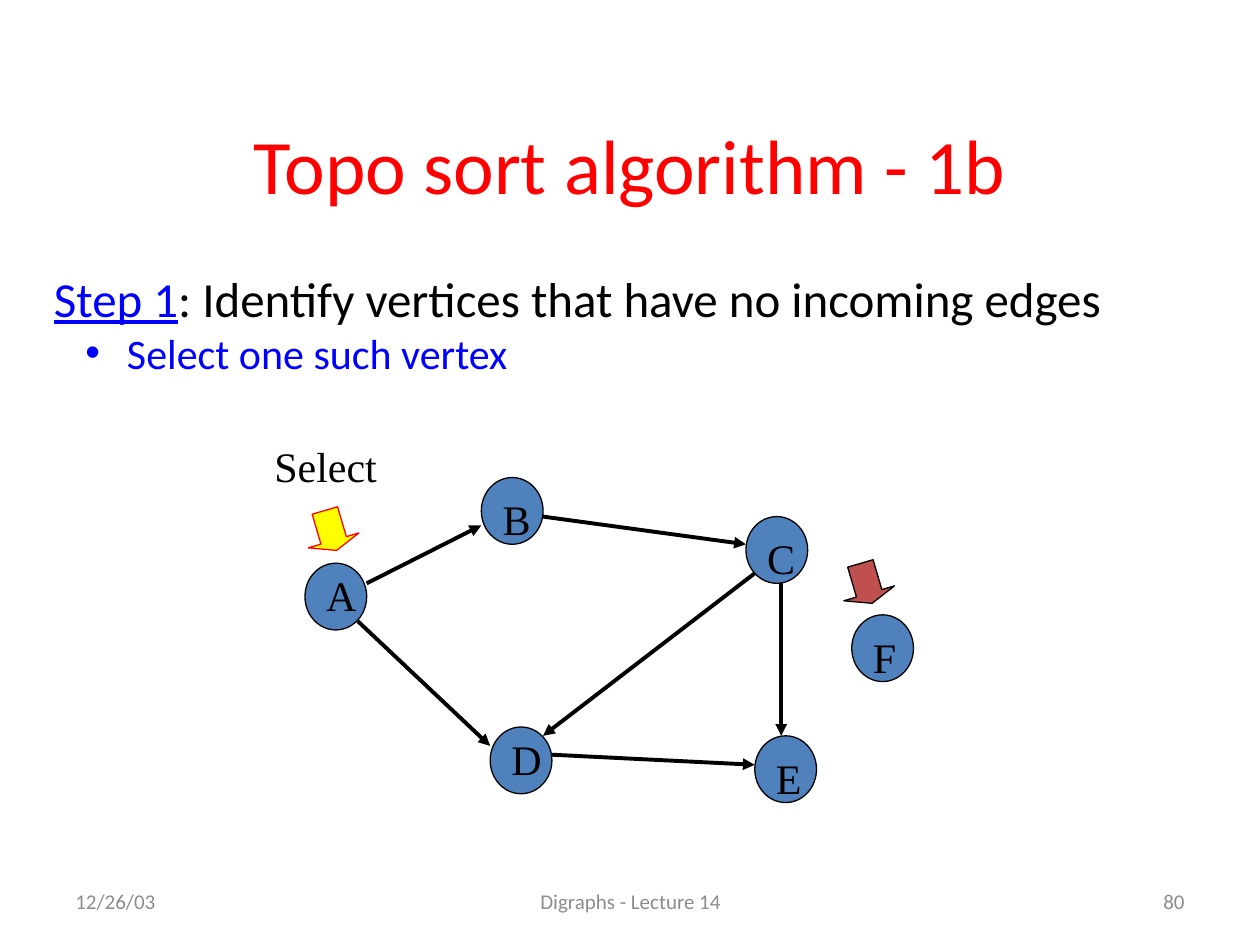
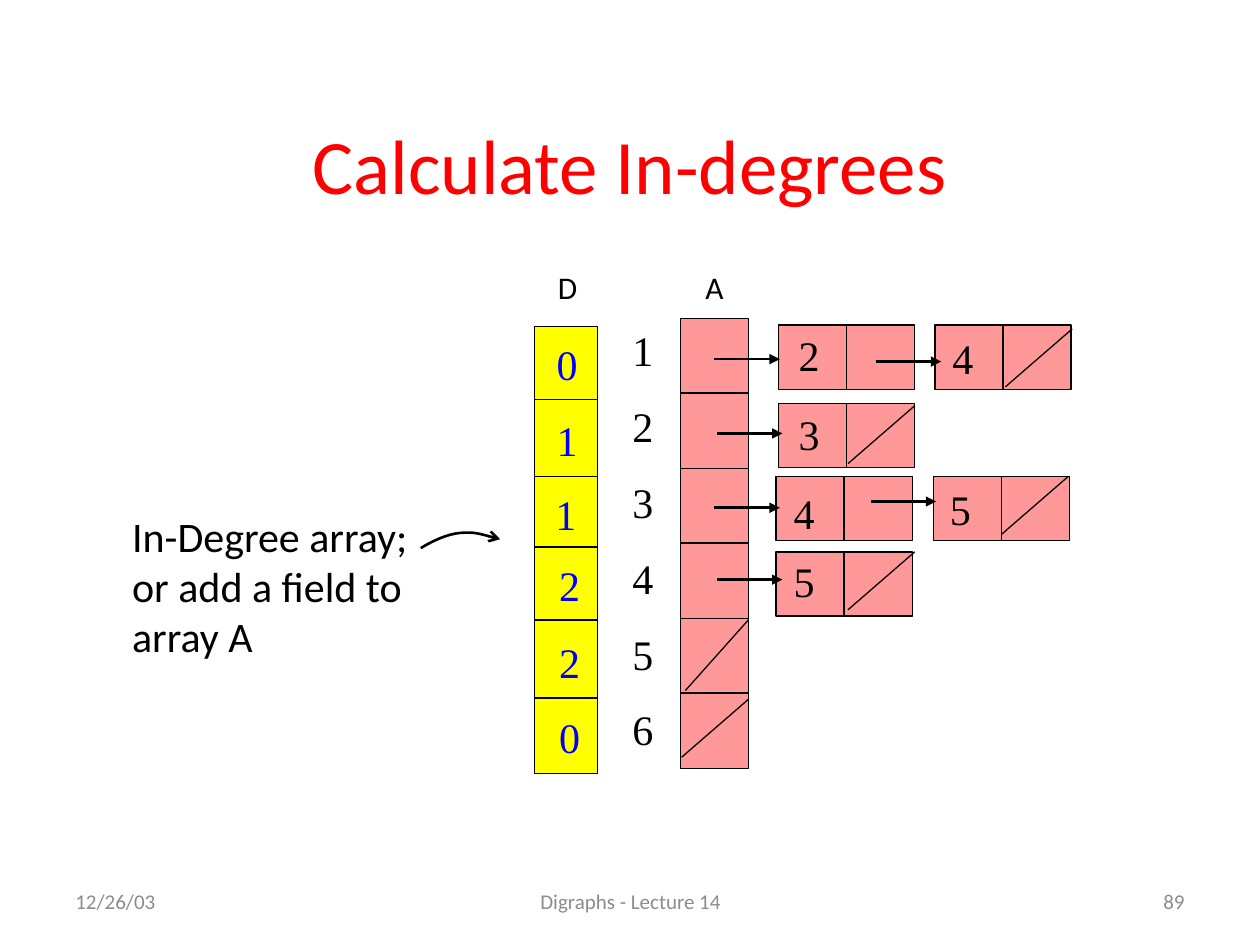
from dataclasses import dataclass

from lxml import etree
from pptx import Presentation
from pptx.dml.color import RGBColor
from pptx.enum.shapes import MSO_CONNECTOR, MSO_SHAPE
from pptx.enum.text import MSO_ANCHOR, PP_ALIGN
from pptx.oxml.ns import qn
from pptx.util import Pt

PX = 9144  # EMU in one px, 100 px to the inch
LEFT, MID, RIGHT = PP_ALIGN.LEFT, PP_ALIGN.CENTER, PP_ALIGN.RIGHT
TOP, MIDDLE = MSO_ANCHOR.TOP, MSO_ANCHOR.MIDDLE
RECT, OVAL, ARROW = MSO_SHAPE.RECTANGLE, MSO_SHAPE.OVAL, MSO_SHAPE.RIGHT_ARROW
STRAIGHT = MSO_CONNECTOR.STRAIGHT


@dataclass(frozen=True)
class Theme:
    sans: str = "Calibri"
    serif: str = "Times New Roman"
    black: str = "000000"
    red: str = "FF0000"
    blue: str = "0000FF"
    gray: str = "8C8C8C"
    node: str = "4F81BD"
    brick: str = "C0504D"
    yellow: str = "FFFF00"
    pink: str = "FF9999"
    title: int = 44
    lead: int = 28
    body: int = 24
    label: int = 18
    foot: int = 12
    thin: float = 0.75
    line: float = 1.5
    edge: float = 2.25


class Deck:
    def __init__(self, theme):
        self.theme = theme
        self.prs = Presentation()
        self.prs.slide_width, self.prs.slide_height = 1000 * PX, 750 * PX

    def page(self, title, number):
        """Start a slide with the shared title and footer."""
        t = self.theme
        layout = self.prs.slide_layouts[6]
        self.shapes = self.prs.slides.add_slide(layout).shapes
        self.text(75, 67, 850, 125, title, t.title, t.red, t.sans, MID, MIDDLE)
        for x, w, words, align in ((50, 233, "12/26/03", LEFT),
                                   (342, 317, "Digraphs - Lecture 14", MID),
                                   (717, 233, number, RIGHT)):
            self.text(x, 695, w, 40, words, t.foot, t.gray, t.sans, align, MIDDLE)

    def style(self, run, size, color, font):
        run.font.size, run.font.name = Pt(size), font
        run.font.color.rgb = RGBColor.from_string(color)

    def text(self, x, y, w, h, words, size=None, color=None, font=None,
             align=LEFT, anchor=TOP, gap=0):
        t = self.theme
        frame = self.shapes.add_textbox(x * PX, y * PX, w * PX, h * PX).text_frame
        frame.text = words
        frame.word_wrap, frame.vertical_anchor = True, anchor
        for i, para in enumerate(frame.paragraphs):
            para.alignment = align
            if i and gap:
                para.space_before = Pt(gap)
            for run in para.runs:
                self.style(run, size or t.body, color or t.black, font or t.serif)
        return frame

    def bullet(self, para, left, hang):
        props = para._p.get_or_add_pPr()
        props.set("marL", str(left * PX))
        props.set("indent", str(-hang * PX))
        etree.SubElement(props, qn("a:buFont"), typeface="Arial")
        etree.SubElement(props, qn("a:buChar"), char="•")

    def ink(self, shape, color, width):
        shape.line.color.rgb = RGBColor.from_string(color)
        shape.line.width = Pt(width)

    def shape(self, kind, x, y, w, h, fill, line=None):
        shape = self.shapes.add_shape(kind, x * PX, y * PX, w * PX, h * PX)
        shape.shadow.inherit = False
        shape.fill.solid()
        shape.fill.fore_color.rgb = RGBColor.from_string(fill)
        self.ink(shape, line or self.theme.black, self.theme.thin)
        return shape

    def block(self, x, y, fill, line=None):
        """Slanted block arrow that points at a node."""
        arrow = self.shape(ARROW, x, y, 33, 42, fill, line)
        arrow.adjustments[0], arrow.adjustments[1] = 0.5, 0.25
        arrow.rotation = 73.6

    def tip(self, shape, kind):
        line = shape.line._get_or_add_ln()
        etree.SubElement(line, qn("a:tailEnd"), type=kind)

    def line(self, x1, y1, x2, y2, width, tip=True):
        line = self.shapes.add_connector(STRAIGHT, x1 * PX, y1 * PX, x2 * PX, y2 * PX)
        self.ink(line, self.theme.black, width)
        etree.SubElement(line._element.spPr, qn("a:effectLst"))
        if tip:
            self.tip(line, "triangle")

    def curve(self, start, points, width):
        """Open Bezier curve: three points for each segment."""
        build = self.shapes.build_freeform(*start, scale=PX)
        build.add_line_segments(points, close=False)
        shape = build.convert_to_shape()
        shape.shadow.inherit = False
        shape.fill.background()
        self.ink(shape, self.theme.black, width)
        self.tip(shape, "arrow")
        steps = shape._element.findall(".//" + qn("a:lnTo"))
        track = steps[0].getparent()
        for i in range(0, len(steps), 3):
            bend = etree.SubElement(track, qn("a:cubicBezTo"))
            for step in steps[i:i + 3]:
                bend.append(step[0])
                track.remove(step)


def sort(deck):
    t = deck.theme
    deck.page("Topo sort algorithm - 1b", "80")

    # Step text
    frame = deck.text(33, 208, 934, 97, "Step 1\nSelect one such vertex",
                      t.body, t.blue, t.sans)
    first, second = frame.paragraphs
    first.runs[0].font.size, first.runs[0].font.underline = Pt(t.lead), True
    rest = first.add_run()
    rest.text = ": Identify vertices that have no incoming edges"
    deck.style(rest, t.lead, t.black, t.sans)
    deck.bullet(second, 58, 33)

    # Graph nodes: name, left, top, drop of the letter
    for name, x, y, drop in (("A", 242, 447, 0), ("B", 382, 379, 8),
                             ("C", 592, 410, 8), ("D", 389, 577, 0),
                             ("E", 599, 584, 8), ("F", 676, 488, 8)):
        deck.shape(OVAL, x, y, 49, 53, t.node)
        deck.text(x + 7, y + drop, 33, 50, name)

    # Graph edges
    for ends in ((291, 463, 382, 417), (431, 410, 592, 432),
                 (284, 493, 389, 592), (438, 599, 599, 607),
                 (620, 463, 620, 584), (599, 455, 431, 584)):
        deck.line(*ends, t.edge)

    # Nodes with no incoming edges
    deck.block(246, 400, t.yellow, t.red)
    deck.block(671, 442, t.brick)
    deck.text(208, 345, 110, 50, "Select")


def degrees(deck):
    t = deck.theme
    deck.page("Calculate In-degrees", "89")

    # In-degree array
    tops = (259, 317, 378, 434, 492, 554, 614)
    for y, end in zip(tops, tops[1:]):
        deck.shape(RECT, 424, y, 50, end - y, t.yellow)
    for x, y, count in ((432, 264, "0"), (432, 324, "1"), (431, 383, "1"),
                        (434, 439, "2"), (434, 500, "2"), (434, 560, "0")):
        deck.text(x, y, 37, 50, count, color=t.blue)
    deck.text(95, 400, 239, 130, "In-Degree array; or add a field to array A",
              font=t.sans)
    deck.curve((334, 435), ((344, 429), (355, 424), (365, 423),
                            (376, 422), (386, 425), (397, 428)), t.line)

    # Array A and its row numbers
    tops = [253 + 119 * i // 2 for i in range(7)]
    for y, end in zip(tops, tops[1:]):
        deck.shape(RECT, 540, y, 54, end - y, t.pink)
    deck.text(492, 253, 48, 360, "\n".join("123456"), gap=14.5)

    # List cells: left, top, value, shift of the value
    for x, y, value, dx, dy in ((618, 258, "2", 6, -1), (742, 258, "4", 4, 1),
                                (618, 320, "3", 6, -1), (616, 378, "4", 4, 4),
                                (741, 378, "5", 3, 1), (616, 438, "5", 4, -2)):
        for left in (x, x + 54):
            deck.shape(RECT, left, y, 54, 51, t.pink)
        deck.text(x + dx, y + dy, 37, 50, value)

    # Pointers
    for x, y in ((567, 285), (569, 344), (567, 403), (569, 460),
                 (691, 398), (695, 287)):
        deck.line(x, y, x + 52, y, t.line)

    # Slashes for empty pointers
    for x, y in ((798, 307), (673, 368), (795, 424), (673, 484), (541, 601)):
        deck.line(x, y, x + 53, y - 46, t.thin, tip=False)
    deck.line(544, 548, 594, 492, t.thin, tip=False)

    # Array names
    for x, name in ((433, "D"), (550, "A")):
        deck.text(x, 208, 40, 43, name, t.label, font=t.sans)


def main():
    deck = Deck(Theme())
    sort(deck)
    degrees(deck)
    deck.prs.save("out.pptx")


if __name__ == "__main__":
    main()
